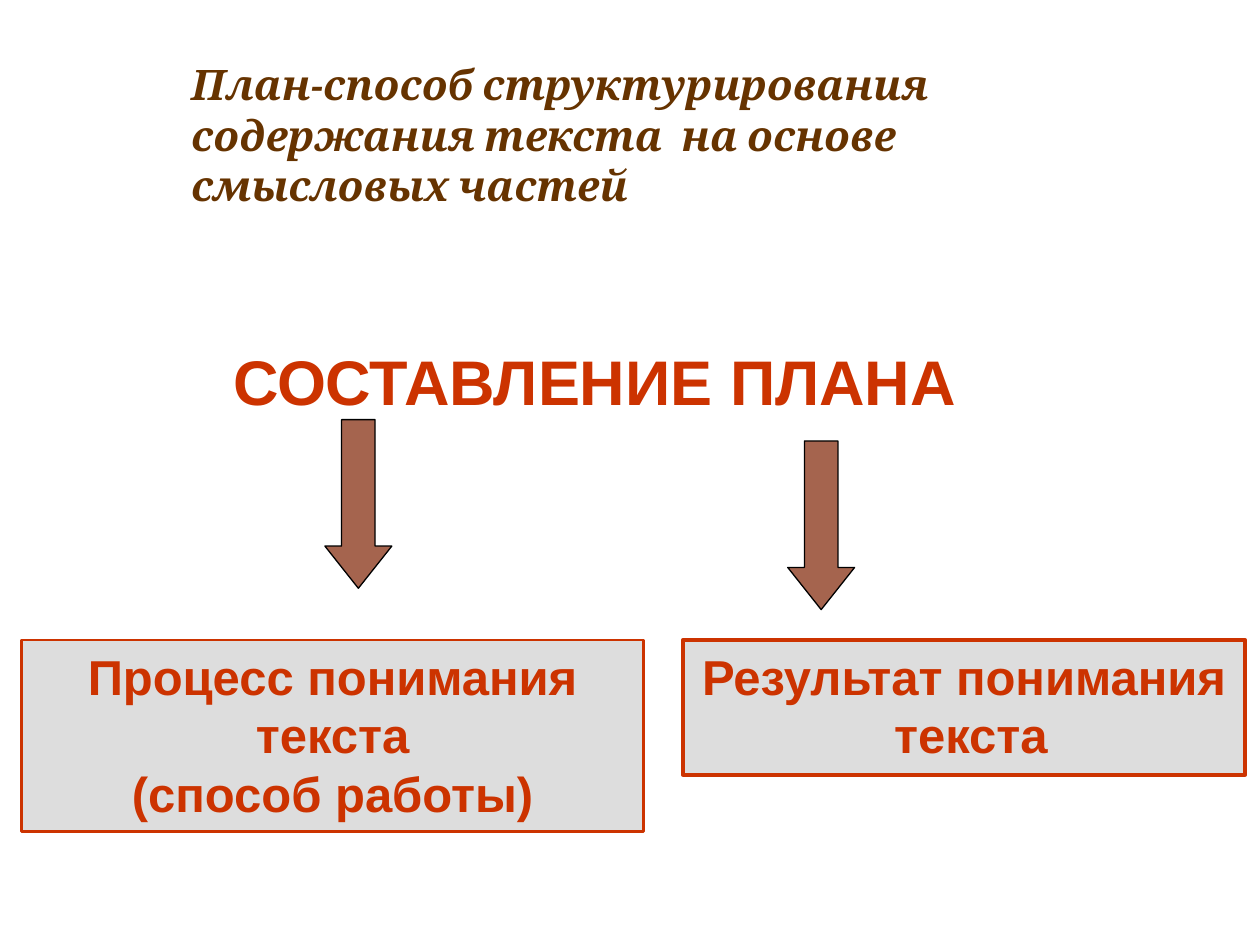
from pptx import Presentation
from pptx.dml.color import RGBColor
from pptx.enum.shapes import MSO_SHAPE
from pptx.enum.text import MSO_ANCHOR, MSO_AUTO_SIZE, PP_ALIGN
from pptx.util import Cm, Pt

BROWN = RGBColor(0x66, 0x33, 0x00)
RED = RGBColor(0xCC, 0x33, 0x00)
GREY = RGBColor(0xDD, 0xDD, 0xDD)
CLAY = RGBColor(0xA5, 0x64, 0x4E)
BLACK = RGBColor(0x00, 0x00, 0x00)


def write_lines(shape, lines, font_name, size, color, alignment, italic=False):
    frame = shape.text_frame
    frame.word_wrap = True
    frame.auto_size = MSO_AUTO_SIZE.NONE
    frame.vertical_anchor = MSO_ANCHOR.TOP
    for index, line in enumerate(lines):
        paragraph = frame.add_paragraph() if index else frame.paragraphs[0]
        paragraph.alignment = alignment
        run = paragraph.add_run()
        run.text = line
        run.font.name = font_name
        run.font.size = Pt(size)
        run.font.bold = True
        run.font.italic = italic
        run.font.color.rgb = color


def add_filled_shape(kind, left, top, width, height, fill, line, line_width):
    shape = slide.shapes.add_shape(kind, Cm(left), Cm(top), Cm(width), Cm(height))
    shape.shadow.inherit = False
    shape.fill.solid()
    shape.fill.fore_color.rgb = fill
    shape.line.color.rgb = line
    shape.line.width = Pt(line_width)
    return shape


presentation = Presentation()
presentation.slide_width = Cm(25.4)
presentation.slide_height = Cm(19.05)
slide = presentation.slides.add_slide(presentation.slide_layouts[5])

title = slide.shapes.title
title.left, title.top, title.width, title.height = Cm(3.6), Cm(1.06), Cm(15.88), Cm(3.33)
definition = [
    "План-способ структурирования",
    "содержания текста  на основе",
    "смысловых частей",
]
write_lines(title, definition, "Cambria", 24, BROWN, PP_ALIGN.LEFT, italic=True)

heading = slide.shapes.add_textbox(Cm(4.45), Cm(6.78), Cm(16.38), Cm(1.78))
write_lines(heading, ["СОСТАВЛЕНИЕ ПЛАНА"], "Arial", 36, RED, PP_ALIGN.LEFT)

boxes = [
    (0.43, 12.55, 3.86, 1.5, ["Процесс понимания текста", "(способ работы)"]),
    (13.77, 11.33, 2.72, 2.25, ["Результат понимания", " текста"]),
]
for left, width, height, line_width, lines in boxes:
    box = add_filled_shape(
        MSO_SHAPE.RECTANGLE, left, 12.9, width, height, GREY, RED, line_width
    )
    write_lines(box, lines, "Arial", 28, RED, PP_ALIGN.CENTER)

for left, top in [(6.55, 8.46), (15.88, 8.89)]:
    arrow = add_filled_shape(
        MSO_SHAPE.DOWN_ARROW, left, top, 1.35, 3.4, CLAY, BLACK, 0.75
    )
    arrow.adjustments[0] = 0.5
    arrow.adjustments[1] = 0.63

presentation.save("out.pptx")
